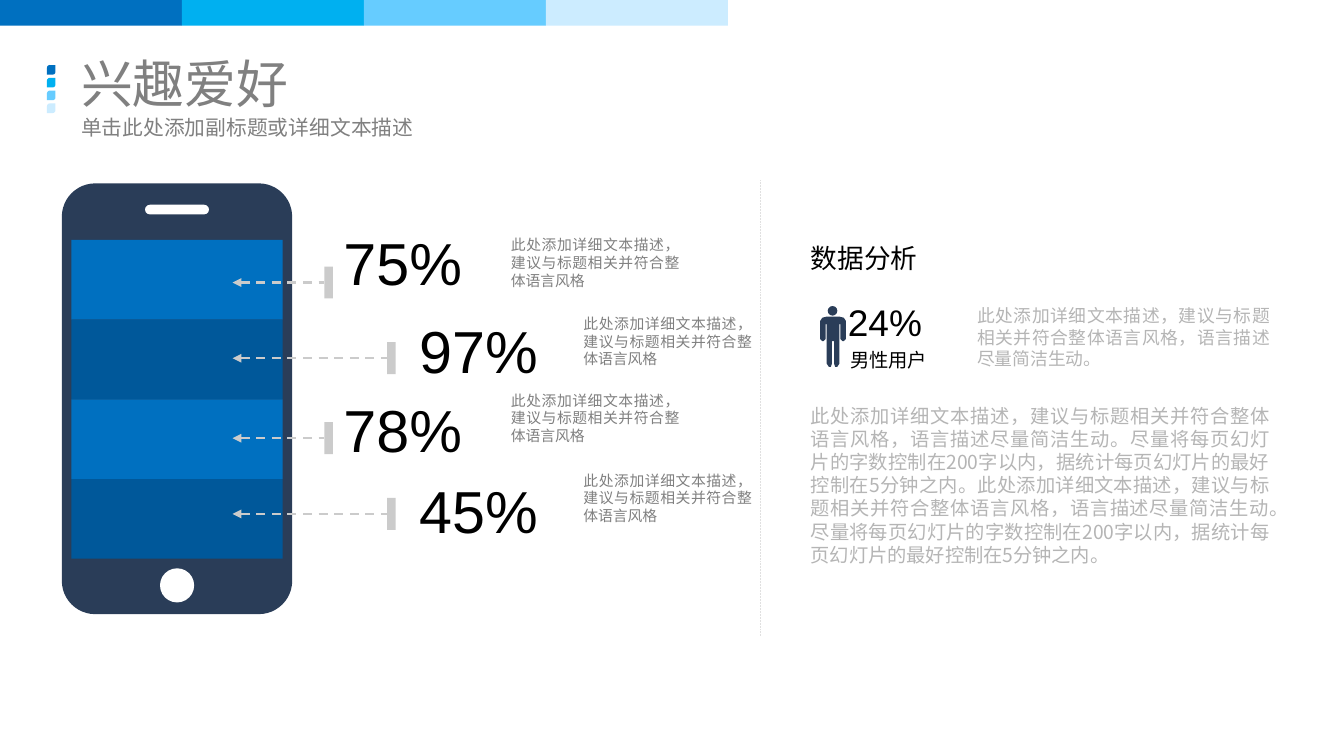
from dataclasses import dataclass
from lxml.etree import SubElement
from pptx import Presentation
from pptx.dml.color import RGBColor
from pptx.enum.dml import MSO_LINE
from pptx.enum.shapes import MSO_CONNECTOR, MSO_SHAPE
from pptx.enum.text import MSO_ANCHOR, MSO_AUTO_SIZE, PP_ALIGN
from pptx.oxml.ns import qn
from pptx.util import Inches, Pt

# Content
TITLE = "兴趣爱好"
SUBTITLE = "单击此处添加副标题或详细文本描述"
RATES = ["75%", "97%", "78%", "45%"]
NOTE = "此处添加详细文本描述，建议与标题相关并符合整体语言风格"
HEADING = "数据分析"
SHARE, GROUP = "24%", "男性用户"
SUMMARY = NOTE + "，语言描述尽量简洁生动。"
ADVICE = "尽量将每页幻灯片的字数控制在200字以内，据统计每页幻灯片的最好控制在5分钟之内。"
DETAIL = (SUMMARY + ADVICE) * 2


@dataclass(frozen=True)
class Theme:
    cjk: str = "Noto Sans CJK SC"
    latin: str = "Arial"
    blues: tuple = ("0070C0", "00B0F0", "66CCFF", "CCECFF")
    bands: tuple = ("0070C0", "00589A")
    navy: str = "2A3D58"
    white: str = "FFFFFF"
    black: str = "000000"
    gray: str = "808080"
    pale: str = "B5B5B5"
    mark: str = "CBCBCB"
    rule: str = "E0E0E0"
    title: int = 35
    rate: int = 40
    share: int = 25
    head: int = 18
    sub: int = 14
    body: int = 13
    brief: int = 12
    note: int = 10


T = Theme()

# Positions in inches
SCREEN = (0.67, 2.25, 1.98, 2.99)
TICK_X = (3.04, 3.63)
TICK_Y = (2.65, 3.36, 4.11, 4.82)
RATE_X = (3.18, 3.89)
RATE_Y = (2.08, 2.91, 3.65, 4.41)
NOTE_X = (4.75, 5.43)
NOTE_Y = (2.17, 2.91, 3.63, 4.38)
MAN_X = 7.81
MAN_HALF = [  # right half of the body: distance from the axis, height
    (0, 2.97), (0.06, 2.97), (0.1, 2.98), (0.12, 3.01), (0.12, 3.18),
    (0.1, 3.2), (0.09, 3.2), (0.07, 3.18), (0.07, 3.04), (0.06, 3.04),
    (0.06, 3.41), (0.04, 3.44), (0.02, 3.44), (0.01, 3.41), (0.01, 3.2), (0, 3.2),
]

deck = Presentation()
deck.slide_width, deck.slide_height = Inches(12.6), Inches(7.09)
slide = deck.slides.add_slide(deck.slide_layouts[5])
shapes = slide.shapes


def paint(shape, color):
    shape.shadow.inherit = False
    shape.fill.solid()
    shape.fill.fore_color.rgb = RGBColor.from_string(color)
    shape.line.fill.background()


def block(kind, box, color, round_by=None):
    shape = shapes.add_shape(kind, *map(Inches, box))
    if round_by is not None:
        shape.adjustments[0] = round_by
    paint(shape, color)


def write(shape, text, size, color, font=T.cjk, align=PP_ALIGN.LEFT,
          anchor=MSO_ANCHOR.TOP, pad=(0.04, 0.04), wrap=True, before=0):
    frame = shape.text_frame
    frame.text = text
    frame.auto_size = MSO_AUTO_SIZE.NONE
    frame.word_wrap, frame.vertical_anchor = wrap, anchor
    frame.margin_left = frame.margin_right = Inches(pad[0])
    frame.margin_top = frame.margin_bottom = Inches(pad[1])
    line = frame.paragraphs[0]
    line.alignment, line.space_before = align, Pt(before)
    for run in line.runs:
        run.font.size, run.font.name = Pt(size), font
        run.font.color.rgb = RGBColor.from_string(color)
        SubElement(run.font._element, qn("a:ea")).set("typeface", font)


def label(box, *args, **style):
    write(shapes.add_textbox(*map(Inches, box)), *args, **style)


def rule(start, end, color, width, dash, arrow=False):
    line = shapes.add_connector(MSO_CONNECTOR.STRAIGHT, *map(Inches, start + end))
    line.line.color.rgb = RGBColor.from_string(color)
    line.line.width, line.line.dash_style = Pt(width), dash
    if arrow:
        SubElement(line.line._get_or_add_ln(), qn("a:headEnd")).set("type", "triangle")
    SubElement(line._element.spPr, qn("a:effectLst"))


# Top strip and title leaves
for i, blue in enumerate(T.blues):
    block(MSO_SHAPE.RECTANGLE, (i * 1.706, 0, 1.706, 0.24), blue)
    block(MSO_SHAPE.ROUND_2_DIAG_RECTANGLE, (0.44, 0.61 + i * 0.12, 0.08, 0.09), blue, 0.33)

# Title and subtitle
title = shapes.title
title.left, title.top, title.width, title.height = map(Inches, (0.63, 0.52, 11.34, 0.51))
write(title, TITLE, T.title, T.gray, anchor=MSO_ANCHOR.MIDDLE, pad=(0.13, 0.06))
label((0.63, 1.02, 11.34, 0.42), SUBTITLE, T.sub, T.gray, pad=(0.13, 0.06))

# Phone
block(MSO_SHAPE.ROUNDED_RECTANGLE, (0.58, 1.72, 2.16, 4.04), T.navy, 0.145)
block(MSO_SHAPE.ROUNDED_RECTANGLE, (1.36, 1.92, 0.6, 0.09), T.white, 0.5)
block(MSO_SHAPE.OVAL, (1.5, 5.33, 0.32, 0.32), T.white)

# Screen bands with arrows, rates and notes
left, top, width, height = SCREEN
step = height / len(RATES)
for i, rate in enumerate(RATES):
    side = i % 2
    x, y = TICK_X[side], TICK_Y[i]
    block(MSO_SHAPE.RECTANGLE, (left, top + i * step, width, step), T.bands[side])
    block(MSO_SHAPE.RECTANGLE, (x, y - 0.15, 0.08, 0.3), T.mark)
    rule((2.18, y), (x, y), T.mark, 1.5, MSO_LINE.DASH, arrow=True)
    label((RATE_X[side], RATE_Y[i], 1.39, 0.84), rate, T.rate, T.black, T.latin, wrap=False)
    label((NOTE_X[side], NOTE_Y[i], 1.66, 0.58), NOTE, T.note, T.gray, align=PP_ALIGN.JUSTIFY)

# Divider
rule((7.13, 1.69), (7.13, 5.96), T.rule, 0.5, MSO_LINE.ROUND_DOT)

# Man
outline = [(MAN_X + dx, y) for dx, y in MAN_HALF]
outline += [(MAN_X - dx, y) for dx, y in reversed(MAN_HALF)]
points = [(Inches(x), Inches(y)) for x, y in outline]
pen = shapes.build_freeform(*points[0])
pen.add_line_segments(points[1:])
paint(pen.convert_to_shape(), T.navy)
block(MSO_SHAPE.OVAL, (MAN_X - 0.05, 2.87, 0.09, 0.09), T.navy)

# Analysis
label((7.56, 2.23, 1.09, 0.38), HEADING, T.head, T.black, wrap=False)
label((7.91, 2.77, 1.57, 0.57), SHARE, T.share, T.black, T.latin, before=6)
label((7.93, 3.1, 1.56, 0.54), GROUP, T.body, T.black, anchor=MSO_ANCHOR.MIDDLE)
label((9.12, 2.82, 2.83, 0.68), SUMMARY, T.brief, T.pale, align=PP_ALIGN.JUSTIFY)
label((7.56, 3.75, 4.38, 1.61), DETAIL, T.body, T.pale, align=PP_ALIGN.JUSTIFY)

deck.save("out.pptx")
